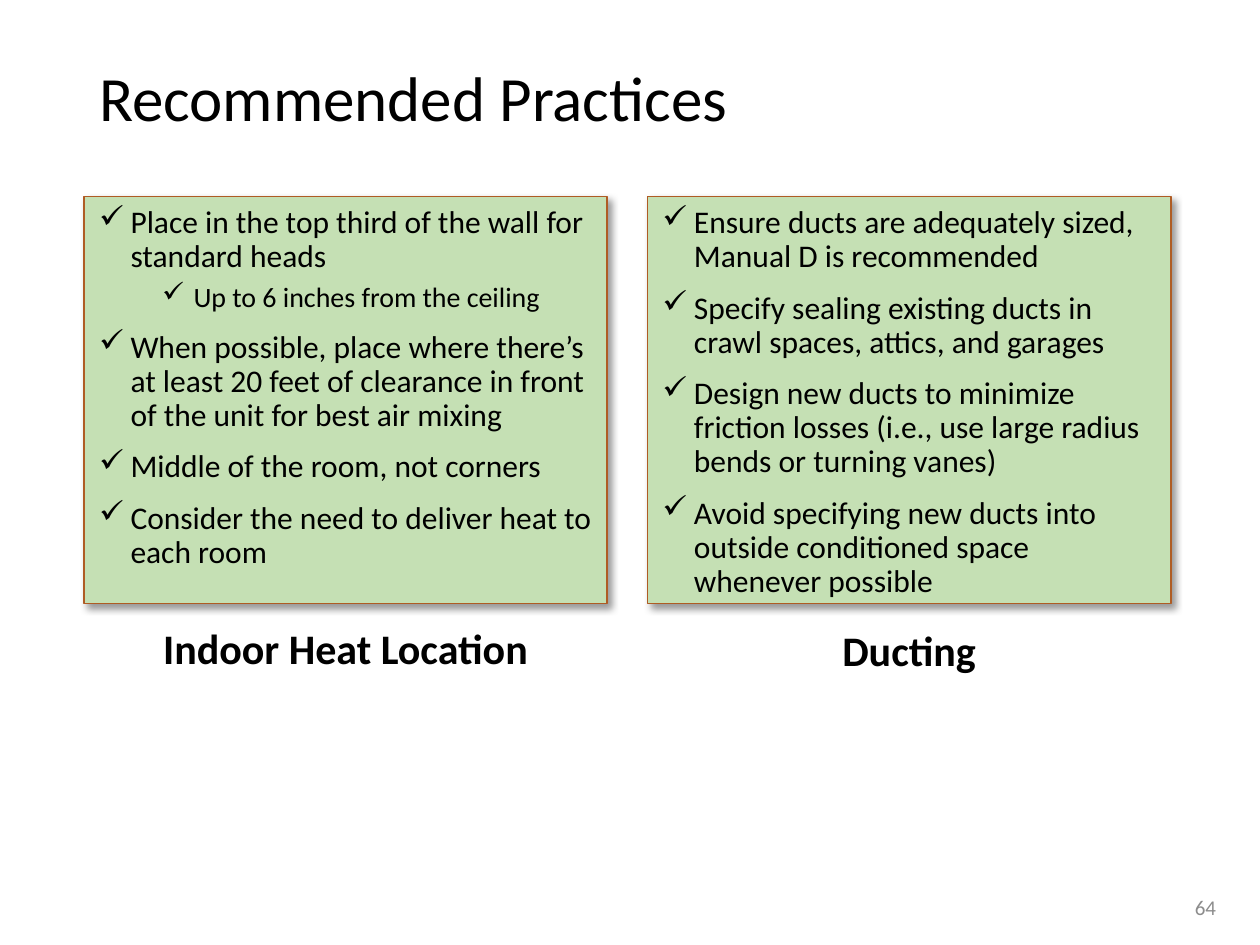
from lxml import etree
from pptx import Presentation
from pptx import util as u
from pptx.dml.color import RGBColor
from pptx.enum import shapes, text
from pptx.oxml import ns

Pt = u.Pt
FONT = "Calibri"
BLACK = RGBColor(0, 0, 0)
GREEN = RGBColor(0xC5, 0xE0, 0xB4)
RUST = RGBColor(0xAF, 0x5C, 0x24)
GRAY = RGBColor(0x8C, 0x8C, 0x8C)

# Each item is (level, text)
COLS = [
    ("Indoor Heat Location", 352, [
        (0, "Place in the top third of the wall for standard heads"),
        (1, "Up to 6 inches from the ceiling"),
        (0, "When possible, place where there’s at least 20 feet of "
            "clearance in front of the unit for best air mixing"),
        (0, "Middle of the room, not corners"),
        (0, "Consider the need to deliver heat to each room")]),
    ("Ducting", 353.5, [
        (0, "Ensure ducts are adequately sized, Manual D is recommended"),
        (0, "Specify sealing existing ducts in crawl spaces, attics, "
            "and garages"),
        (0, "Design new ducts to minimize friction losses (i.e., use large "
            "radius bends or turning vanes)"),
        (0, "Avoid specifying new ducts into outside conditioned space "
            "whenever possible")]),
]


def add(parent, tag, **attrs):
    node = etree.SubElement(parent, ns.qn(tag))
    for key, val in attrs.items():
        node.set(key, str(val))
    return node


def write(para, words, size=18, color=BLACK, bold=False, align=None,
          space=None, before=None):
    """Fill a paragraph and format it."""
    para.text = words
    font = para.runs[0].font
    font.name, font.size, font.bold = FONT, Pt(size), bold
    font.color.rgb = color
    para.alignment = align
    if space:
        para.line_spacing = space
    if before is not None:
        para.space_before = Pt(before)


def text_box(slide, x, y, w, h, anchor=text.MSO_ANCHOR.TOP):
    frame = slide.shapes.add_textbox(Pt(x), Pt(y), Pt(w), Pt(h)).text_frame
    frame.word_wrap = True
    frame.vertical_anchor = anchor
    return frame


def panel(slide, x, y, w, h):
    """Green card with a soft shadow to the lower right."""
    card = slide.shapes.add_shape(shapes.MSO_SHAPE.RECTANGLE,
                                  Pt(x), Pt(y), Pt(w), Pt(h))
    card.fill.solid()
    card.fill.fore_color.rgb = GREEN
    card.line.color.rgb = RUST
    card.line.width = Pt(1)
    card.shadow.inherit = False
    effects = card.element.spPr.find(ns.qn("a:effectLst"))
    shade = add(effects, "a:outerShdw", blurRad=Pt(4), dist=Pt(3),
                dir=45 * 60000, algn="tl", rotWithShape=0)
    add(add(shade, "a:srgbClr", val=BLACK), "a:alpha", val=40000)


def checks(slide, x, y, w, h, items):
    """Check-marked list with one sublevel."""
    frame = text_box(slide, x, y, w, h)
    for i, (level, words) in enumerate(items):
        para = frame.paragraphs[0] if i == 0 else frame.add_paragraph()
        write(para, words, size=16 if level else 18, space=0.9,
              before=0 if i == 0 else 5 if level else 10)
        para.level = level
        props = para._p.get_or_add_pPr()
        props.set("marL", str(Pt(18 + 36 * level)))
        props.set("indent", str(Pt(-18)))
        add(props, "a:buChar", char="✓")


def title(slide, words):
    shape = slide.shapes.title
    shape.left, shape.top = Pt(49.5), Pt(21.6)
    shape.width, shape.height = Pt(621), Pt(72)
    shape.text_frame.vertical_anchor = text.MSO_ANCHOR.MIDDLE
    write(shape.text_frame.paragraphs[0], words, size=36,
          align=text.PP_ALIGN.LEFT, space=0.9)


def main():
    deck = Presentation()
    deck.slide_width, deck.slide_height = Pt(720), Pt(540)
    slide = deck.slides.add_slide(deck.slide_layouts[5])
    title(slide, "Recommended Practices")

    # Two columns: card, list and caption
    for i, (name, top, items) in enumerate(COLS):
        x = 48 + 322 * i
        panel(slide, x, 112.3, 299, 232.6)
        checks(slide, x + 1.5, 114.5, 306 - 7 * i, 267 + 104.5 * i, items)
        cap = text_box(slide, x + 11, top, 277, 36)
        write(cap.paragraphs[0], name, size=24, bold=True,
              align=text.PP_ALIGN.CENTER)

    # Page number
    page = text_box(slide, 540, 504, 162, 28.8, text.MSO_ANCHOR.MIDDLE)
    write(page.paragraphs[0], "64", size=12, color=GRAY,
          align=text.PP_ALIGN.RIGHT)
    deck.save("out.pptx")


if __name__ == "__main__":
    main()
